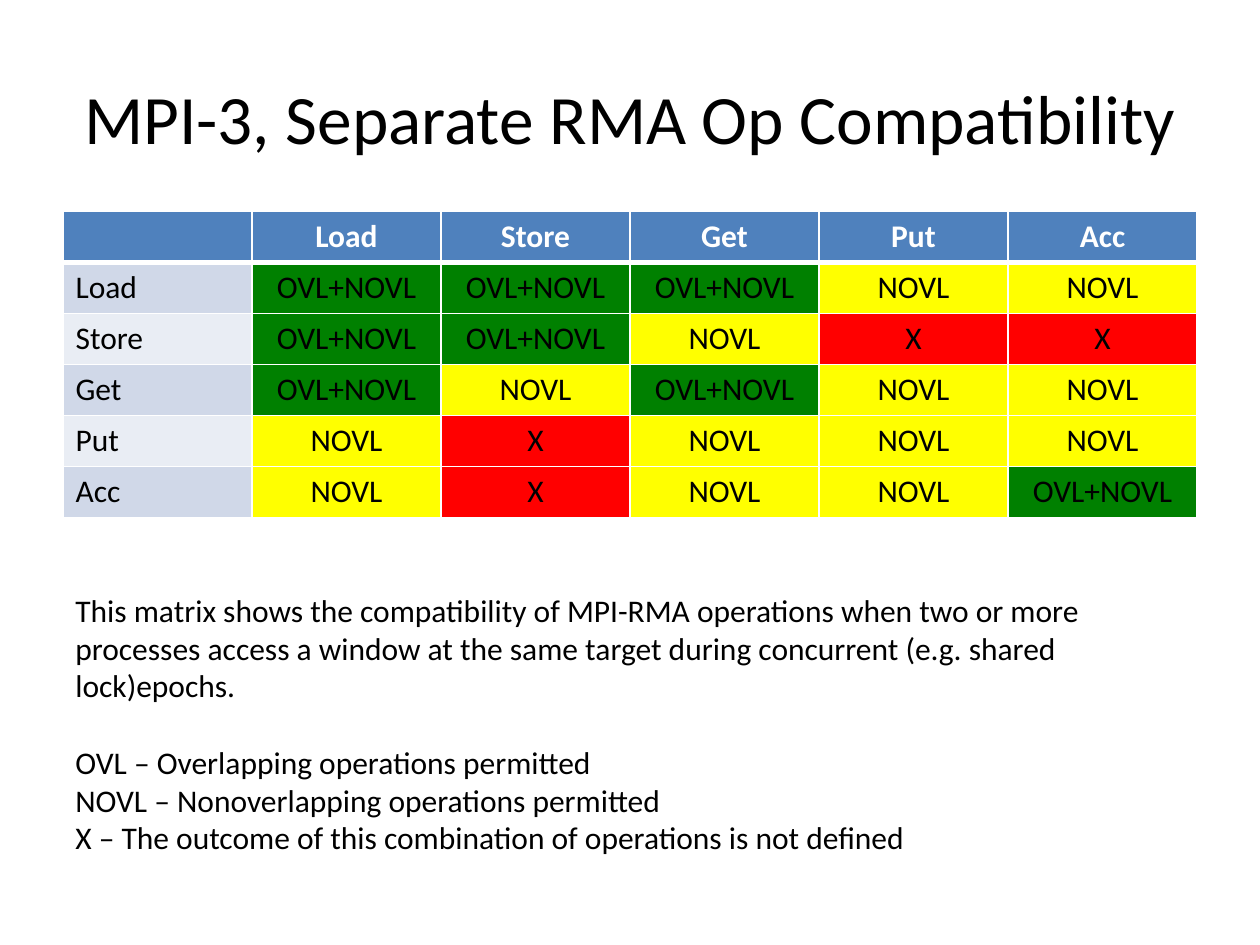
from lxml.etree import SubElement
from pptx import Presentation
from pptx.dml.color import RGBColor
from pptx.enum.text import MSO_ANCHOR, PP_ALIGN
from pptx.oxml.ns import qn
from pptx.util import Inches, Pt

COLORS = {
    "text": "000000", "white": "FFFFFF", "header": "4F81BD",
    "odd": "D0D8E8", "even": "E9EDF4",
    "OVL+NOVL": "008000", "NOVL": "FFFF00", "X": "FF0000",
}
OPERATIONS = ["Load", "Store", "Get", "Put", "Acc"]
CODES = {"B": "OVL+NOVL", "N": "NOVL", "X": "X"}
MATRIX = ["BBBNN", "BBNXX", "BNBNN", "NXNNN", "NXNNB"]


def add_run(para, text, size=18, color="text", bold=False):
    span = para.add_run()
    span.text = text
    span.font.name = "Calibri"
    span.font.size = Pt(size)
    span.font.bold = bold
    span.font.color.rgb = RGBColor.from_string(COLORS[color])


def add_border(cell, side, points):
    line = SubElement(cell._tc.get_or_add_tcPr(), qn(f"a:ln{side}"), w=str(Pt(points)))
    fill = SubElement(line, qn("a:solidFill"))
    SubElement(fill, qn("a:srgbClr"), val=COLORS["white"])


deck = Presentation()
deck.slide_width, deck.slide_height = Inches(10), Inches(7.5)
page = deck.slides.add_slide(deck.slide_layouts[6])
left = int(deck.slide_width * 0.05)
width = deck.slide_width - 2 * left

# Title
box = page.shapes.add_textbox(left, int(deck.slide_height * 0.04), width, Inches(1.25))
box.text_frame.word_wrap = True
box.text_frame.vertical_anchor = MSO_ANCHOR.MIDDLE
para = box.text_frame.paragraphs[0]
para.alignment = PP_ALIGN.CENTER
add_run(para, "MPI-3, Separate RMA Op Compatibility", size=39.6)

# Compatibility table
rows = [[""] + OPERATIONS]
for operation, codes in zip(OPERATIONS, MATRIX):
    rows.append([operation] + [CODES[code] for code in codes])
count = len(rows)
table = page.shapes.add_table(
    count, count, left, Inches(1.68), width, Inches(2.43)).table

for row, labels in enumerate(rows):
    for column, label in enumerate(labels):
        cell = table.cell(row, column)
        for side in "LRTB":
            below_header = (row, side) in [(0, "B"), (1, "T")]
            add_border(cell, side, 3 if below_header else 1)
        if row == 0:
            shade = "header"
        elif column == 0:
            shade = "odd" if row % 2 else "even"
        else:
            shade = label
        cell.fill.solid()
        cell.fill.fore_color.rgb = RGBColor.from_string(COLORS[shade])
        para = cell.text_frame.paragraphs[0]
        if column > 0:
            para.alignment = PP_ALIGN.CENTER
        if label:
            add_run(para, label, color="white" if row == 0 else "text", bold=row == 0)

# Explanation and legend
box = page.shapes.add_textbox(left, Inches(4.64), width, Inches(2.22))
box.text_frame.word_wrap = True
add_run(
    box.text_frame.paragraphs[0],
    "This matrix shows the compatibility of MPI-RMA operations when two or more "
    "processes access a window at the same target during concurrent "
    "(e.g. shared lock)epochs.")
legend = [
    "OVL – Overlapping operations permitted",
    "NOVL – Nonoverlapping operations permitted",
    "X – The outcome of this combination of operations is not defined",
]
for index, entry in enumerate(legend):
    para = box.text_frame.add_paragraph()
    if index == 0:
        para.space_before = Pt(22)
    add_run(para, entry)

deck.save("out.pptx")
